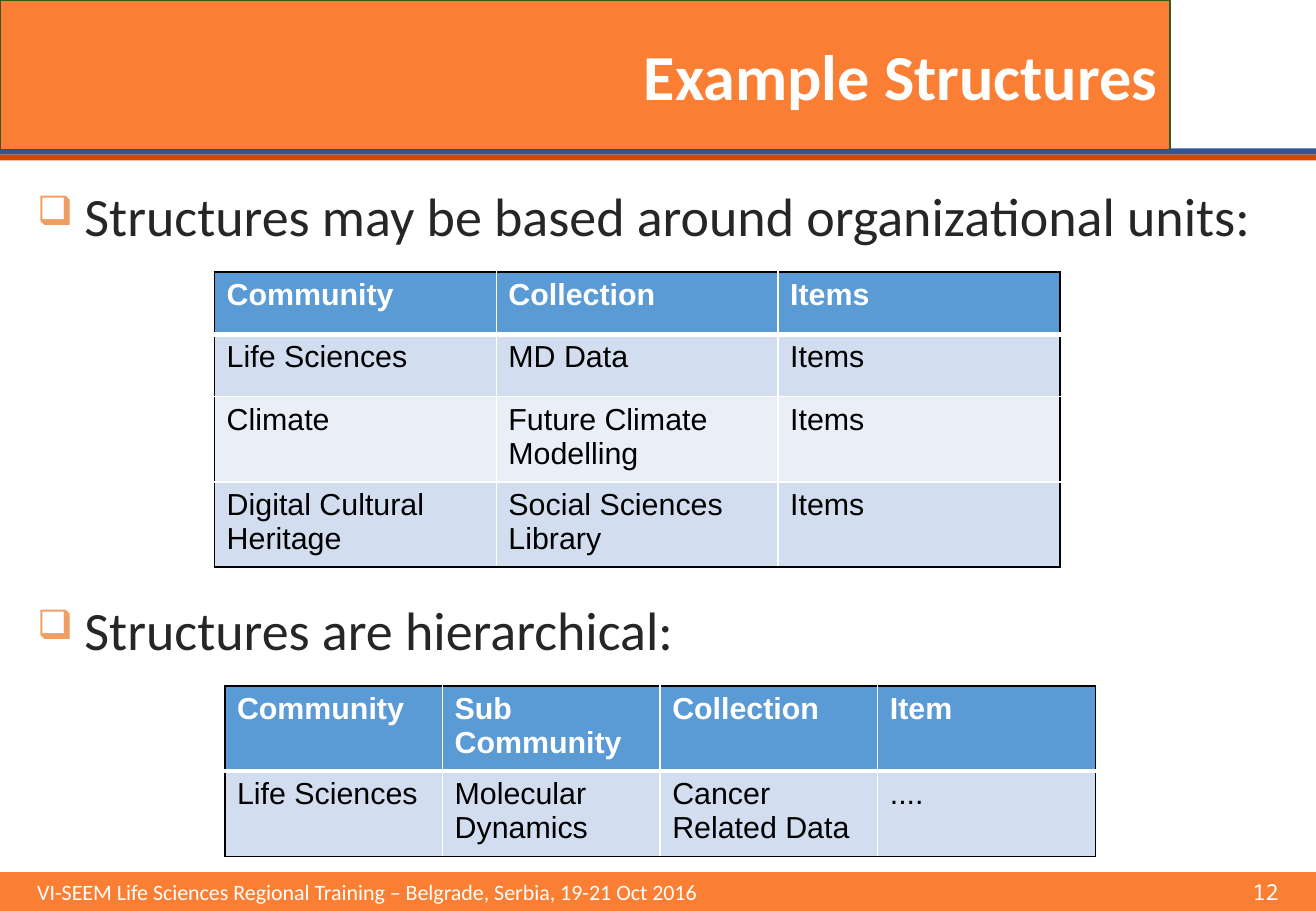
from lxml.etree import SubElement
from pptx import Presentation
from pptx.dml.color import RGBColor
from pptx.enum.shapes import MSO_SHAPE
from pptx.enum.text import MSO_ANCHOR, MSO_AUTO_SIZE, PP_ALIGN
from pptx.oxml import parse_xml
from pptx.oxml.ns import nsdecls, qn
from pptx.util import Pt

HUES = {
    "white": "FFFFFF", "black": "000000", "ink": "262626",
    "orange": "FA7F34", "rust": "CF4901", "navy": "2F5597",
    "green": "385723", "bullet": "F19E65",
    "head": "5B9BD5", "odd": "D2DEEF", "even": "EAEFF7",
}
WIDE, HIGH = 780, 540

UNITS = [
    ["Community", "Collection", "Items"],
    ["Life Sciences", "MD Data", "Items"],
    ["Climate", "Future Climate Modelling", "Items"],
    ["Digital Cultural Heritage", "Social Sciences Library", "Items"],
]
LEVELS = [
    ["Community", "Sub Community", "Collection", "Item"],
    ["Life Sciences", "Molecular Dynamics", "Cancer Related Data", "...."],
]


def color(name):
    return RGBColor.from_string(HUES[name])


def write(para, text, size=18, font="Calibri", hue="white", bold=False, align=PP_ALIGN.LEFT):
    para.alignment = align
    run = para.add_run()
    run.text = text
    run.font.size = Pt(size)
    run.font.name = font
    run.font.bold = bold
    run.font.color.rgb = color(hue)


class Page:
    """Holds the slide and draws each kind of element on it."""

    def __init__(self, deck):
        self.slide = deck.slides.add_slide(deck.slide_layouts[5])
        self.shapes = self.slide.shapes

    def place(self, shape, left, top, width, height):
        shape.left, shape.top = Pt(left), Pt(top)
        shape.width, shape.height = Pt(width), Pt(height)

    def bar(self, top, height, hue):
        bar = self.shapes.add_shape(MSO_SHAPE.RECTANGLE, 0, Pt(top), Pt(WIDE), Pt(height))
        bar.shadow.inherit = False
        bar.fill.solid()
        bar.fill.fore_color.rgb = color(hue)
        bar.line.fill.background()
        return bar

    def title(self, text):
        title = self.shapes.title
        self.place(title, 0, 0, 693.5, 88.5)
        title.fill.solid()
        title.fill.fore_color.rgb = color("orange")
        title.line.color.rgb = color("green")
        title.line.width = Pt(0.75)
        frame = title.text_frame
        frame.auto_size = MSO_AUTO_SIZE.NONE
        frame.vertical_anchor = MSO_ANCHOR.MIDDLE
        write(frame.paragraphs[0], text, size=38, bold=True, align=PP_ALIGN.RIGHT)
        self.shapes.element.append(title.element)

    def points(self, texts, gap):
        box = self.shapes.add_textbox(Pt(15), Pt(109), Pt(750), Pt(387))
        frame = box.text_frame
        frame.word_wrap = True
        for i, text in enumerate(texts):
            para = frame.add_paragraph() if i else frame.paragraphs[0]
            para.line_spacing = 0.9
            if i:
                para.space_before = Pt(gap)
            props = para._p.get_or_add_pPr()
            props.set("marL", str(Pt(28)))
            props.set("indent", str(-Pt(28)))
            tint = SubElement(props, qn("a:buClr"))
            SubElement(tint, qn("a:srgbClr"), val=HUES["bullet"])
            SubElement(props, qn("a:buSzPct"), val="75000")
            SubElement(props, qn("a:buChar"), char="❑")
            write(para, text, size=32, hue="ink")

    def footer(self, text, number):
        frame = self.bar(517, 23, "orange").text_frame
        frame.margin_left = Pt(22)
        frame.vertical_anchor = MSO_ANCHOR.MIDDLE
        para = frame.paragraphs[0]
        tabs = SubElement(para._p.get_or_add_pPr(), qn("a:tabLst"))
        SubElement(tabs, qn("a:tab"), pos=str(Pt(736)), algn="r")
        write(para, text + "\t", size=13)
        write(para, number, size=13, font="Noto Sans Mono")

    def edge(self, cell, sides):
        props = cell._tc.get_or_add_tcPr()
        for side, (hue, width) in sides.items():
            props.append(parse_xml(
                f'<a:ln{side} {nsdecls("a")} w="{Pt(width)}"><a:solidFill>'
                f'<a:srgbClr val="{HUES[hue]}"/></a:solidFill></a:ln{side}>'))

    def table(self, data, left, top, width, heights):
        rows, cols = len(data), len(data[0])
        table = self.shapes.add_table(
            rows, cols, Pt(left), Pt(top), Pt(width * cols), Pt(sum(heights))).table
        for col in table.columns:
            col.width = Pt(width)
        outer, inner, rule = ("black", 1), ("white", 1), ("white", 3)
        for r, line in enumerate(data):
            table.rows[r].height = Pt(heights[r])
            for c, text in enumerate(line):
                cell = table.cell(r, c)
                self.edge(cell, {
                    "L": inner if c else outer,
                    "R": inner if c < cols - 1 else outer,
                    "T": outer if r == 0 else rule if r == 1 else inner,
                    "B": outer if r == rows - 1 else inner if r else rule,
                })
                cell.fill.solid()
                hue = "head" if r == 0 else "odd" if r % 2 else "even"
                cell.fill.fore_color.rgb = color(hue)
                write(cell.text_frame.paragraphs[0], text, font="Arial",
                      hue="black" if r else "white", bold=r == 0)


def main():
    deck = Presentation()
    deck.slide_width, deck.slide_height = Pt(WIDE), Pt(HIGH)
    page = Page(deck)
    page.bar(91.5, 3.6, "rust")
    page.bar(87.9, 3.6, "navy")
    page.title("Example Structures")
    page.points(["Structures may be based around organizational units:",
                 "Structures are hierarchical:"], gap=211)
    page.footer("VI-SEEM Life Sciences Regional Training – Belgrade, Serbia, 19-21 Oct 2016", "12")
    page.table(UNITS, 127.2, 161.2, 167, [37, 37, 47.5, 47.5])
    page.table(LEVELS, 133.3, 406.7, 129, [47.5, 47.5])
    deck.save("out.pptx")


if __name__ == "__main__":
    main()
